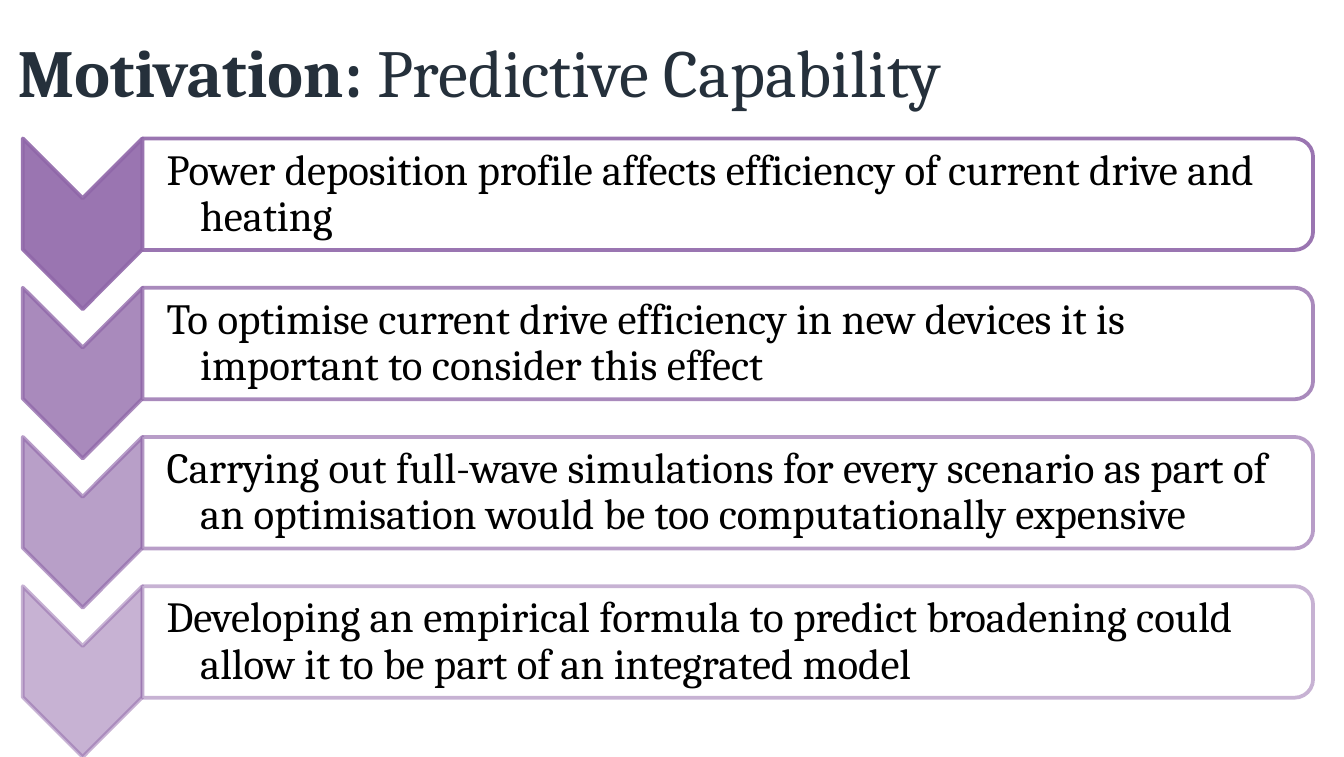
from lxml.etree import SubElement
from pptx import Presentation
from pptx.dml.color import RGBColor
from pptx.enum.shapes import MSO_SHAPE
from pptx.enum.text import MSO_ANCHOR
from pptx.oxml.ns import qn
from pptx.util import Inches, Pt

COLORS = {"title": "25303B", "purple": "9067A9", "white": "FFFFFF", "text": "000000"}
FONT = "Cambria"
POINTS = [
    ("Power deposition profile affects efficiency of current drive and heating", 90),
    ("To optimise current drive efficiency in new devices it is important to consider this effect", 77),
    ("Carrying out full-wave simulations for every scenario as part of an optimisation "
     "would be too computationally expensive", 63),
    ("Developing an empirical formula to predict broadening could allow it to be part of "
     "an integrated model", 50),
]


def set_attrs(obj, values):
    for name, value in values.items():
        setattr(obj, name, value)


def set_color(fill, color, alpha):
    fill.solid()
    fill.fore_color.rgb = RGBColor.from_string(COLORS[color])
    clr = fill._xPr.find(qn("a:solidFill"))[0]
    SubElement(clr, qn("a:alpha"), val=str(alpha * 1000))


def add_text(shapes, box, runs, size, color, insets):
    tb = shapes.add_textbox(*map(Inches, box))
    tf = tb.text_frame
    margins = zip(("margin_left", "margin_top", "margin_right", "margin_bottom"), map(Inches, insets))
    set_attrs(tf, {"word_wrap": True, "vertical_anchor": MSO_ANCHOR.MIDDLE, **dict(margins)})
    p = tf.paragraphs[0]
    for text, bold in runs:
        r = p.add_run()
        r.text = text
        set_attrs(r.font, {"name": FONT, "size": Pt(size), "bold": bold})
        r.font.color.rgb = RGBColor.from_string(COLORS[color])
    return p


def add_turned(shapes, kind, box, fill, fill_alpha, line_alpha):
    x, y, w, h = box
    turned = (x + (w - h) / 2, y + (h - w) / 2, h, w)
    sp = shapes.add_shape(kind, *map(Inches, turned))
    sp.rotation = 90
    sp.shadow.inherit = False
    set_color(sp.fill, fill, fill_alpha)
    set_color(sp.line.fill, "purple", line_alpha)
    sp.line.width = Pt(2)


def add_title(slide, box):
    runs = [("Motivation: ", True), ("Predictive Capability", False)]
    add_text(slide.shapes, box, runs, 36, "title", (0.09, 0.04, 0.09, 0.04))


def add_row(shapes, box, text, alpha):
    x, y, w, h = box
    arrow_w, panel_h, pad = 0.89, 0.83, 0.04
    panel_x, panel_w = x + arrow_w, w - arrow_w
    add_turned(shapes, MSO_SHAPE.CHEVRON, (x, y, arrow_w, h), "purple", alpha, alpha)
    add_turned(shapes, MSO_SHAPE.ROUND_2_SAME_RECTANGLE, (panel_x, y, panel_w, panel_h),
               "white", 90, alpha)
    p = add_text(shapes, (panel_x, y + pad, panel_w - pad, panel_h - 2 * pad),
                 [(text, False)], 23, "text", (0.18, 0.02, 0.02, 0.02))
    p.line_spacing = 0.9
    pPr = p._p.get_or_add_pPr()
    pPr.set("marL", str(Inches(0.25)))
    pPr.set("indent", str(Inches(-0.25)))


def add_chevron_list(slide, box):
    x, y, w, h = box
    row_h = 1.27
    step = (h - row_h) / (len(POINTS) - 1)
    group = slide.shapes.add_group_shape()
    for i, (text, alpha) in enumerate(POINTS):
        add_row(group.shapes, (x, y + i * step, w, row_h), text, alpha)


def main():
    prs = Presentation()
    set_attrs(prs, {"slide_width": Inches(10), "slide_height": Inches(5.63)})
    s = prs.slides.add_slide(prs.slide_layouts[6])
    add_title(s, (0.04, 0.16, 8.42, 0.73))
    add_chevron_list(s, (0.17, 1.03, 9.6, 4.6))
    prs.save("out.pptx")


if __name__ == "__main__":
    main()
